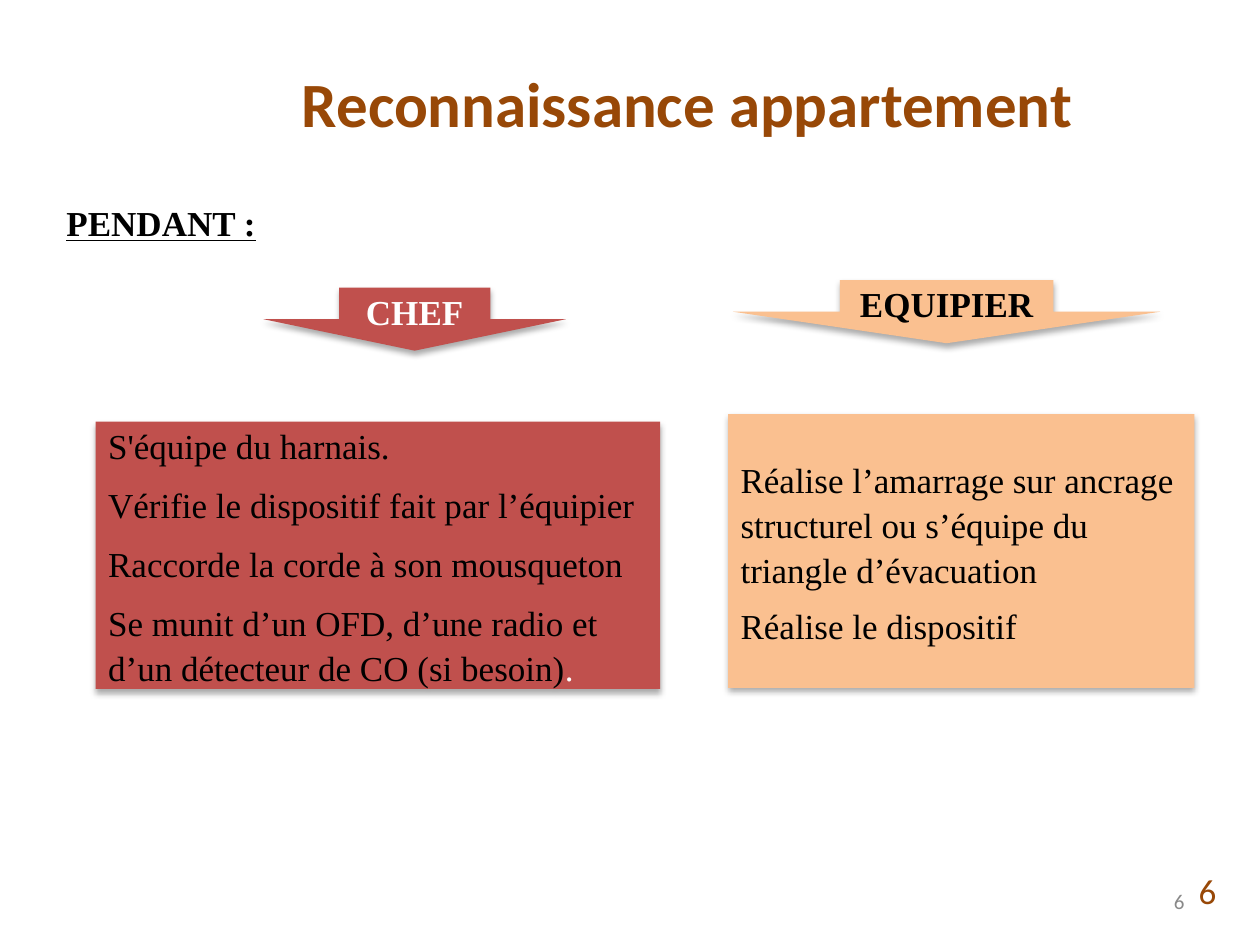
from dataclasses import dataclass

from lxml import etree
from pptx import Presentation
from pptx.dml.color import RGBColor
from pptx.enum.shapes import MSO_SHAPE
from pptx.enum.text import MSO_ANCHOR, PP_ALIGN
from pptx.oxml.ns import qn
from pptx.util import Cm, Pt

RECTANGLE, DOWN_ARROW = MSO_SHAPE.RECTANGLE, MSO_SHAPE.DOWN_ARROW
TOP, MIDDLE = MSO_ANCHOR.TOP, MSO_ANCHOR.MIDDLE
LEFT, CENTER, RIGHT = PP_ALIGN.LEFT, PP_ALIGN.CENTER, PP_ALIGN.RIGHT


@dataclass(frozen=True)
class Theme:
    brown: str = "984807"
    red: str = "C0504D"
    orange: str = "FAC090"
    black: str = "000000"
    white: str = "FFFFFF"
    grey: str = "898989"
    heading_font: str = "Calibri"
    body_font: str = "Times New Roman"
    title_size: int = 36
    body_size: int = 20
    small_size: int = 12


THEME = Theme()


@dataclass(frozen=True)
class Box:
    left: float
    top: float
    width: float
    height: float

    def lengths(self):
        return Cm(self.left), Cm(self.top), Cm(self.width), Cm(self.height)


def add_run(paragraph, text, color, size=THEME.body_size,
            font=THEME.body_font, bold=False, underline=False):
    run = paragraph.add_run()
    run.text = text
    run.font.name = font
    run.font.size = Pt(size)
    run.font.bold = bold
    run.font.underline = underline
    run.font.color.rgb = RGBColor.from_string(color)


def add_label(slide, box, text, color, align=LEFT, anchor=MIDDLE, wrap=True, **style):
    """Place one line of text in a text box."""
    frame = slide.shapes.add_textbox(*box.lengths()).text_frame
    frame.word_wrap = wrap
    frame.vertical_anchor = anchor
    paragraph = frame.paragraphs[0]
    paragraph.alignment = align
    add_run(paragraph, text, color, **style)


def add_shadow(shape):
    """Give a shape a soft shadow straight below it."""
    shape.shadow.inherit = False
    effects = shape._element.spPr.find(qn("a:effectLst"))
    shadow = etree.SubElement(
        effects, qn("a:outerShdw"), blurRad=str(Pt(3.5)), dist=str(Pt(2.2)),
        dir="5400000", algn="ctr", rotWithShape="0")
    color = etree.SubElement(shadow, qn("a:srgbClr"), val=THEME.black)
    etree.SubElement(color, qn("a:alpha"), val="32000")


def add_filled_shape(slide, kind, box, fill):
    shape = slide.shapes.add_shape(kind, *box.lengths())
    shape.fill.solid()
    shape.fill.fore_color.rgb = RGBColor.from_string(fill)
    shape.line.fill.background()
    add_shadow(shape)
    shape.text_frame.word_wrap = True
    shape.text_frame.vertical_anchor = MIDDLE
    return shape


def add_role(slide, box, name, name_color, fill, arrow_offset, arrow_width, tasks):
    """Place a role: a named arrow above a panel of tasks."""
    panel_offset = 2.7

    # Arrow with the role name
    arrow_box = Box(box.left + arrow_offset, box.top, arrow_width, 1.27)
    arrow = add_filled_shape(slide, DOWN_ARROW, arrow_box, fill)
    paragraph = arrow.text_frame.paragraphs[0]
    paragraph.alignment = CENTER
    add_run(paragraph, name, name_color, bold=True)

    # Panel with one paragraph per task
    panel_box = Box(box.left, box.top + panel_offset,
                    box.width, box.height - panel_offset)
    frame = add_filled_shape(slide, RECTANGLE, panel_box, fill).text_frame
    for index, runs in enumerate(tasks):
        paragraph = frame.add_paragraph() if index else frame.paragraphs[0]
        paragraph.alignment = LEFT
        paragraph.line_spacing = 1.07
        paragraph.space_after = Pt(8)
        for text, color in runs:
            add_run(paragraph, text, color)
    return frame


def add_header(slide, box):
    """Place the title, and the phase below it."""
    add_label(slide, Box(box.left + 2.01, box.top, box.width - 2.01, 2.62),
              "Reconnaissance appartement", THEME.brown, CENTER,
              size=THEME.title_size, font=THEME.heading_font, bold=True)
    add_label(slide, Box(box.left, box.top + 3.18, 4.34, 1.09), "PENDANT :",
              THEME.black, anchor=TOP, wrap=False, bold=True, underline=True)


def add_page_numbers(slide, box):
    """Place the large number, and the small one to its lower left."""
    add_label(slide, box, "6", THEME.brown, RIGHT,
              size=THEME.body_size, font=THEME.heading_font)
    small_box = Box(box.left - 0.64, box.top + 0.2, box.width, box.height)
    add_label(slide, small_box, "6", THEME.grey, RIGHT,
              size=THEME.small_size, font=THEME.heading_font)


def main():
    presentation = Presentation()
    presentation.slide_width, presentation.slide_height = Cm(25.4), Cm(19.05)
    blank_layout = presentation.slide_layouts[6]
    slide = presentation.slides.add_slide(blank_layout)

    add_header(slide, Box(1.09, 0.76, 23.52, 4.27))
    add_page_numbers(slide, Box(18.85, 17.45, 5.92, 1.02))

    black = THEME.black
    add_role(slide, Box(1.93, 5.8, 11.38, 8.09), "CHEF", THEME.white, THEME.red,
             3.38, 6.1, [
                 [("S'équipe du harnais.", black)],
                 [("Vérifie le dispositif fait par l’équipier", black)],
                 [("Raccorde la corde à son mousqueton", black)],
                 [("Se munit d’un OFD, d’une radio et d’un détecteur de CO "
                   "(si besoin)", black), (".", THEME.white)],
             ])
    helper_tasks = add_role(
        slide, Box(14.68, 5.65, 9.4, 8.22), "EQUIPIER", black, THEME.orange,
        0.1, 8.61, [
            [("Réalise l’amarrage sur ancrage structurel ou s’équipe du "
              "triangle d’évacuation", black)],
            [("Réalise le dispositif", black)],
        ])
    # The last task of the helper is set solid
    last_task = helper_tasks.paragraphs[-1]
    last_task.line_spacing = 1.0
    last_task.space_after = Pt(0)

    presentation.save("out.pptx")


if __name__ == "__main__":
    main()
